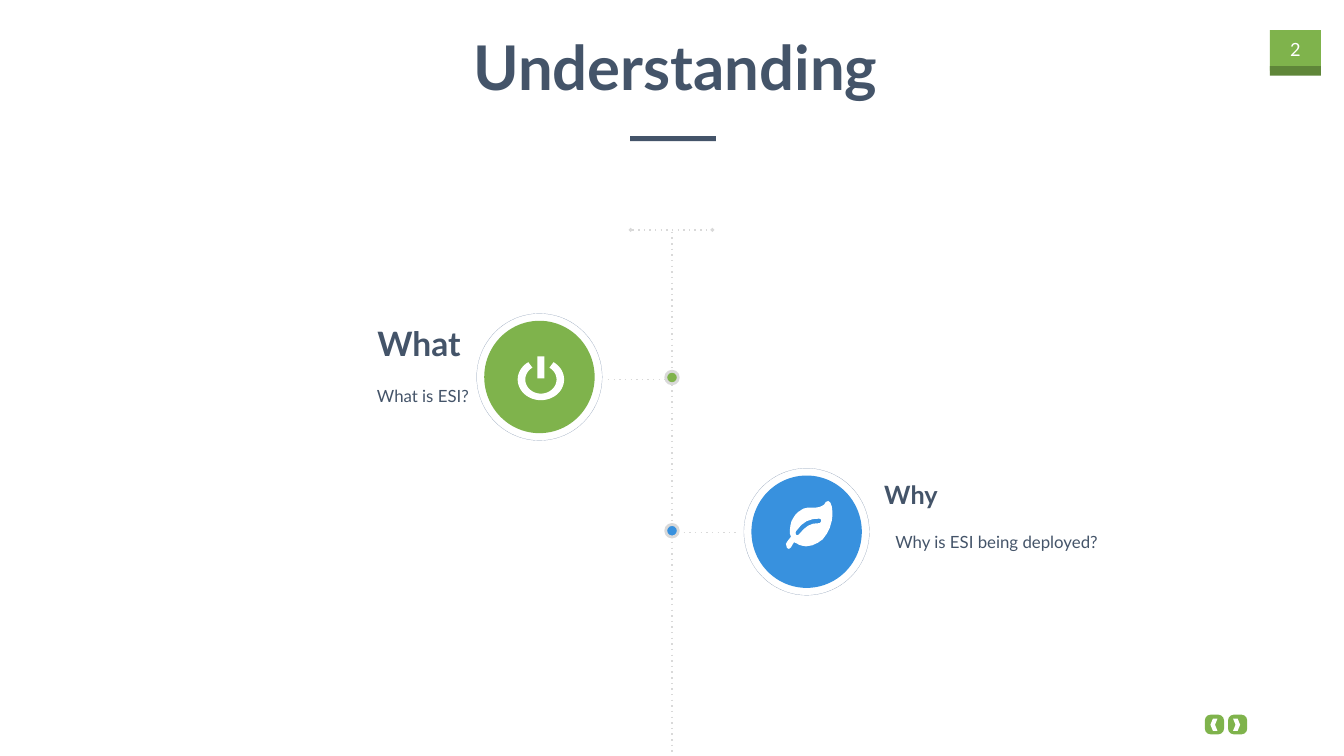
from math import cos, radians, sin

from lxml import etree
from pptx import Presentation
from pptx.dml.color import RGBColor
from pptx.enum.shapes import MSO_CONNECTOR, MSO_SHAPE
from pptx.enum.text import MSO_AUTO_SIZE, PP_ALIGN
from pptx.oxml.ns import qn
from pptx.util import Inches, Pt

# Grid of square cells: 26.66 columns by 15 rows
COLS, ROWS = 26.66, 15
CELL = Inches(1)

GREEN = RGBColor(0x7F, 0xB3, 0x4C)
DARK_GREEN = RGBColor(0x5F, 0x86, 0x39)
BLUE = RGBColor(0x38, 0x91, 0xDE)
NAVY = RGBColor(0x44, 0x54, 0x69)
SLATE = RGBColor(0x84, 0x97, 0xB0)
GREY = RGBColor(0xD9, 0xD9, 0xD9)
WHITE = RGBColor(0xFF, 0xFF, 0xFF)

RECT, OVAL = MSO_SHAPE.RECTANGLE, MSO_SHAPE.OVAL
ROUNDED, CHEVRON = MSO_SHAPE.ROUNDED_RECTANGLE, MSO_SHAPE.CHEVRON
STRAIGHT = MSO_CONNECTOR.STRAIGHT
LEFT, CENTER, RIGHT = PP_ALIGN.LEFT, PP_ALIGN.CENTER, PP_ALIGN.RIGHT

AXIS = 13.33  # column of the timeline
TOP = 4.56    # row of the timeline's cap

LEAF_OUTLINE = [
    (16.47, 9.97), (16.5, 10.05), (16.51, 10.14), (16.51, 10.24), (16.5, 10.33),
    (16.46, 10.47), (16.4, 10.59), (16.32, 10.7), (16.22, 10.77), (16.11, 10.82),
    (15.99, 10.84), (15.92, 10.83), (15.85, 10.81), (15.8, 10.78), (15.75, 10.76),
    (15.73, 10.79), (15.69, 10.86), (15.65, 10.89), (15.61, 10.87), (15.59, 10.79),
    (15.62, 10.74), (15.65, 10.7), (15.69, 10.65), (15.67, 10.59), (15.67, 10.5),
    (15.68, 10.42), (15.7, 10.34), (15.74, 10.27), (15.78, 10.21), (15.83, 10.16),
    (15.89, 10.12), (15.94, 10.09), (16.03, 10.07), (16.13, 10.07), (16.19, 10.07),
    (16.25, 10.06), (16.3, 10.04), (16.35, 10.01), (16.38, 9.96), (16.43, 9.94),
]
LEAF_VEIN = [
    (16.25, 10.38), (16.27, 10.37), (16.29, 10.34), (16.28, 10.3), (16.25, 10.29),
    (16.12, 10.3), (16, 10.34), (15.89, 10.42), (15.79, 10.54), (15.78, 10.57),
    (15.79, 10.61), (15.82, 10.62), (15.85, 10.6), (15.94, 10.5), (16.03, 10.43),
    (16.13, 10.39),
]


def cells(*values):
    return [round(CELL * v) for v in values]


def set_dash(sp, dash):
    ln = sp.element.spPr.find(qn("a:ln"))
    etree.SubElement(ln, qn("a:prstDash")).set("val", dash)
    return ln


def paint(sp, fill=None, line=None, width=0):
    sp.shadow.inherit = False
    if fill is None:
        sp.fill.background()
    else:
        sp.fill.solid()
        sp.fill.fore_color.rgb = fill
    if line is None:
        sp.line.fill.background()
    else:
        sp.line.color.rgb = line
        sp.line.width = Pt(width)
    return sp


def add_block(slide, kind, x, y, w, h, fill=None, line=None, width=0):
    return paint(slide.shapes.add_shape(kind, *cells(x, y, w, h)), fill, line, width)


def add_disc(slide, cx, cy, w, h, **style):
    return add_block(slide, OVAL, cx - w / 2, cy - h / 2, w, h, **style)


def add_icon(slide, *contours):
    """White outline; a contour inside another one is a hole."""
    builder = None
    for contour in contours:
        points = [cells(*point) for point in contour]
        if builder is None:
            builder = slide.shapes.build_freeform(*points[0], scale=1.0)
        else:
            builder.move_to(*points[0])
        builder.add_line_segments(points[1:], close=True)
    return paint(builder.convert_to_shape(), WHITE)


def add_dotted_line(slide, x1, y1, x2, y2, ends=None):
    line = slide.shapes.add_connector(STRAIGHT, *cells(x1, y1, x2, y2))
    line.line.color.rgb = GREY
    line.line.width = Pt(2)
    ln = set_dash(line, "dot")
    if ends:
        for tag in ("a:headEnd", "a:tailEnd"):
            etree.SubElement(ln, qn(tag)).set("type", ends)
    etree.SubElement(line.element.spPr, qn("a:effectLst"))


def add_text(slide, text, x, y, w, h, size, color=NAVY, bold=False, align=LEFT,
             inset=0.2, wrap=True, spacing=None, before=0, indent=0):
    tf = slide.shapes.add_textbox(*cells(x, y, w, h)).text_frame
    tf.word_wrap = wrap
    tf.auto_size = MSO_AUTO_SIZE.SHAPE_TO_FIT_TEXT
    tf.margin_left = tf.margin_right = cells(inset)[0]
    tf.margin_top = tf.margin_bottom = cells(inset / 2)[0]
    p = tf.paragraphs[0]
    p.alignment = align
    p.space_before = Pt(before)
    if spacing:
        p.line_spacing = spacing
    if indent:
        p._p.get_or_add_pPr().set("marL", str(cells(indent)[0]))
    r = p.add_run()
    r.text = text
    r.font.name = "Lato"
    r.font.size = Pt(size)
    r.font.bold = bold
    r.font.color.rgb = color


def add_badge(slide, cx, cy, color):
    add_disc(slide, cx, cy, 2.19, 2.23, fill=color)
    set_dash(add_disc(slide, cx, cy, 2.49, 2.52, line=SLATE, width=0.25), "sysDash")


def add_node(slide, cy, color):
    add_disc(slide, AXIS, cy, 0.25, 0.25, fill=color, line=GREY, width=4)


def add_power_icon(slide, cx, cy):
    def arc(rx, ry, angles):
        return [(cx + rx * sin(radians(a)), cy - ry * cos(radians(a))) for a in angles]

    sweep = range(33, 328, 6)
    add_icon(slide, arc(0.46, 0.41, sweep) + arc(0.31, 0.28, reversed(sweep)))
    add_block(slide, RECT, cx - 0.07, cy - 0.46, 0.14, 0.44, WHITE)


def add_nav_button(slide, x, arrow_x, turn):
    button = add_block(slide, ROUNDED, x, 14.18, 0.38, 0.39, GREEN)
    button.adjustments[0] = 0.3
    arrow = add_block(slide, CHEVRON, arrow_x, 14.26, 0.14, 0.24, WHITE)
    arrow.adjustments[0] = 0.35
    arrow.rotation = turn


def main():
    prs = Presentation()
    prs.slide_width, prs.slide_height = cells(COLS, ROWS)
    slide = prs.slides.add_slide(prs.slide_layouts[6])

    # Page number and navigation
    add_block(slide, RECT, 25.19, 0.6, 1.01, 0.8, GREEN)
    add_block(slide, RECT, 25.19, 1.31, 1.01, 0.19, DARK_GREEN)
    add_text(slide, "2", 25.27, 0.66, 0.85, 0.64, 26, WHITE, align=CENTER, wrap=False)
    add_nav_button(slide, 23.9, 24.01, 180)
    add_nav_button(slide, 24.36, 24.46, 0)

    # Title
    add_text(slide, "Understanding", 5.91, 0.53, 14.98, 1.58, 88,
             bold=True, align=CENTER, inset=0.1)
    add_block(slide, RECT, 12.5, 2.7, 1.7, 0.1, NAVY)

    # Timeline
    add_dotted_line(slide, AXIS - 0.82, TOP, AXIS + 0.8, TOP, ends="diamond")
    for start, end in ((4.6, 7.33), (7.63, 10.36), (10.64, ROWS)):
        add_dotted_line(slide, AXIS, start, AXIS, end)
    add_dotted_line(slide, 12.06, 7.53, 13.21, 7.53)
    add_dotted_line(slide, 13.45, 10.56, 14.6, 10.56)
    add_node(slide, 7.49, GREEN)
    add_node(slide, 10.53, BLUE)

    # What
    add_badge(slide, 10.7, 7.48, GREEN)
    add_power_icon(slide, 10.73, 7.53)
    add_text(slide, "What", 6.63, 6.3, 2.71, 1.01, 48, bold=True, align=RIGHT)
    add_text(slide, "What is ESI?", 4.72, 7.47, 4.78, 0.64, 24,
             align=RIGHT, spacing=1.2, before=17)

    # Why
    add_badge(slide, 16, 10.55, BLUE)
    add_icon(slide, LEAF_OUTLINE, LEAF_VEIN)
    add_text(slide, "Why", 17.34, 9.41, 8.84, 0.81, 36, bold=True)
    add_text(slide, "Why is ESI being deployed?", 17.36, 10.36, 5.24, 0.69, 24,
             spacing=1.2, before=17, indent=0.2)

    prs.save("out.pptx")


if __name__ == "__main__":
    main()
